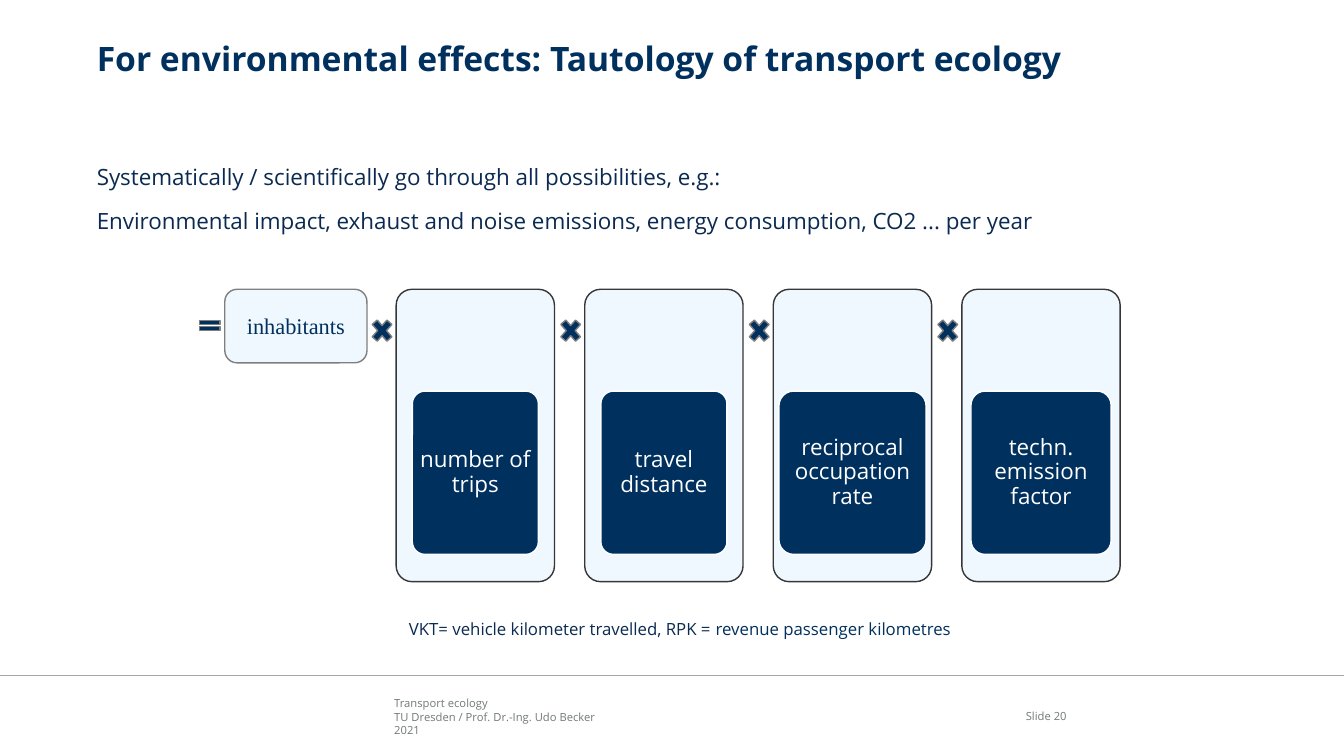
from lxml import etree
from pptx import Presentation
from pptx.dml.color import RGBColor
from pptx.enum.shapes import MSO_CONNECTOR, MSO_SHAPE
from pptx.enum.text import MSO_ANCHOR, MSO_AUTO_SIZE, PP_ALIGN
from pptx.oxml.ns import qn
from pptx.util import Inches, Pt

ROUNDED = MSO_SHAPE.ROUNDED_RECTANGLE
TIMES = MSO_SHAPE.MATH_MULTIPLY
EQUAL = MSO_SHAPE.MATH_EQUAL
STRAIGHT = MSO_CONNECTOR.STRAIGHT
LEFT, CENTER, RIGHT = PP_ALIGN.LEFT, PP_ALIGN.CENTER, PP_ALIGN.RIGHT
TOP, MIDDLE, BOTTOM = MSO_ANCHOR.TOP, MSO_ANCHOR.MIDDLE, MSO_ANCHOR.BOTTOM
NO_FIT = MSO_AUTO_SIZE.NONE

COLORS = {
    "navy": "00305E",
    "ink": "0B2A51",
    "pale": "F0F8FF",
    "outline": "363636",
    "gray": "7F7F7F",
    "rule": "A6A6A6",
    "footer": "727879",
    "white": "FFFFFF",
}


def rgb(name):
    return RGBColor.from_string(COLORS[name])


def write(tf, *paragraphs, size=16, color="navy", font="Open Sans", bold=False,
          align=LEFT, anchor=TOP, inset=(0, 0), before=0, spacing=1.0):
    """Fill a text frame; a paragraph is a string or a list of (text, color) runs."""
    tf.word_wrap = True
    tf.auto_size = NO_FIT
    tf.vertical_anchor = anchor
    tf.margin_left = tf.margin_right = Inches(inset[0])
    tf.margin_top = tf.margin_bottom = Inches(inset[1])
    for i, runs in enumerate(paragraphs):
        p = tf.add_paragraph() if i else tf.paragraphs[0]
        p.alignment = align
        p.line_spacing = spacing
        p.space_before = Pt(before if i else 0)
        for text, shade in [(runs, color)] if isinstance(runs, str) else runs:
            r = p.add_run()
            r.text = text
            r.font.name = font
            r.font.size = Pt(size)
            r.font.bold = bold
            r.font.color.rgb = rgb(shade)


class Deck:
    """Hold the current slide and place elements in percent of its size."""

    def __init__(self, width, height):
        self.prs = Presentation()
        self.prs.slide_width = Inches(width)
        self.prs.slide_height = Inches(height)
        self.slide = self.prs.slides.add_slide(self.prs.slide_layouts[5])

    def box(self, x, y, w, h):
        sw, sh = self.prs.slide_width, self.prs.slide_height
        return [round(v * side / 100) for v, side in zip((x, y, w, h), (sw, sh, sw, sh))]

    def title(self, text, *place, **fmt):
        sp = self.slide.shapes.title
        sp.left, sp.top, sp.width, sp.height = self.box(*place)
        write(sp.text_frame, text, **fmt)

    def text(self, paragraphs, *place, **fmt):
        sp = self.slide.shapes.add_textbox(*self.box(*place))
        write(sp.text_frame, *paragraphs, **fmt)

    def shape(self, kind, *place, fill="navy", line="gray", radius=None, text=None, **fmt):
        sp = self.slide.shapes.add_shape(kind, *self.box(*place))
        sp.shadow.inherit = False
        sp.fill.solid()
        sp.fill.fore_color.rgb = rgb(fill)
        sp.line.color.rgb = rgb(line)
        sp.line.width = Pt(1)
        if radius is not None:
            sp.adjustments[0] = radius
        if text:
            write(sp.text_frame, text, align=CENTER, anchor=MIDDLE, **fmt)

    def rule(self, y):
        x, top, w, h = self.box(0, y, 100, 0)
        sp = self.slide.shapes.add_connector(STRAIGHT, x, top, x + w, top + h)
        sp.line.color.rgb = rgb("rule")
        sp.line.width = Pt(1)
        etree.SubElement(sp._element.spPr, qn("a:effectLst"))


def main():
    margin, content = 7.2, 86.8
    row, panel_x, panel_w, pitch = 38.27, 29.48, 11.78, 14.03
    sign_w = 2.1
    factors = [
        ("number of trips", 9.38),
        ("travel distance", 9.38),
        ("reciprocal occupation rate", 10.95),
        ("techn. emission factor", 10.43),
    ]

    deck = Deck(13.33, 7.5)
    deck.text(["Transport ecology", "TU Dresden / Prof. Dr.-Ing. Udo Becker", "2021"],
              29.33, 92.13, 42.5, 5.33, size=8, color="footer", anchor=BOTTOM)
    deck.rule(89.33)
    deck.text(["Slide 20"], 73.59, 92, 5.78, 5.33, size=8, color="footer",
              align=RIGHT, anchor=MIDDLE)

    deck.title("For environmental effects: Tautology of transport ecology",
               margin, 5.07, content, 10, size=24, bold=True)
    deck.text(["Systematically / scientifically go through all possibilities, e.g.:",
               "Environmental impact, exhaust and noise emissions, energy consumption, "
               "CO2 ... per year"],
              margin, 21.6, content, 12, color="ink", before=12)

    deck.shape(EQUAL, 14.55, 42, sign_w, 2.13)
    deck.shape(ROUNDED, 16.73, row, 10.58, 9.73, fill="pale", text="inhabitants",
               font="Times New Roman", inset=(0.1, 0.05))
    for i, (factor, card_w) in enumerate(factors):
        x = panel_x + i * pitch
        deck.shape(TIMES, x - sign_w, 41.6, sign_w, 4.27)
        deck.shape(ROUNDED, x, row, panel_w, 38.67, fill="pale", line="outline", radius=0.1)
        deck.shape(ROUNDED, x + (panel_w - card_w) / 2, 51.73, card_w, 21.6, line="white",
                   radius=0.1, text=factor, color="white", inset=(0.04, 0.03), spacing=0.9)

    deck.text([[("VKT= vehicle kilometer travelled, RPK = ", "ink"),
                ("revenue passenger kilometres", "navy")]],
              margin, 81.2, content, 4, size=12, align=CENTER, inset=(0.1, 0.05))
    deck.prs.save("out.pptx")


if __name__ == "__main__":
    main()
